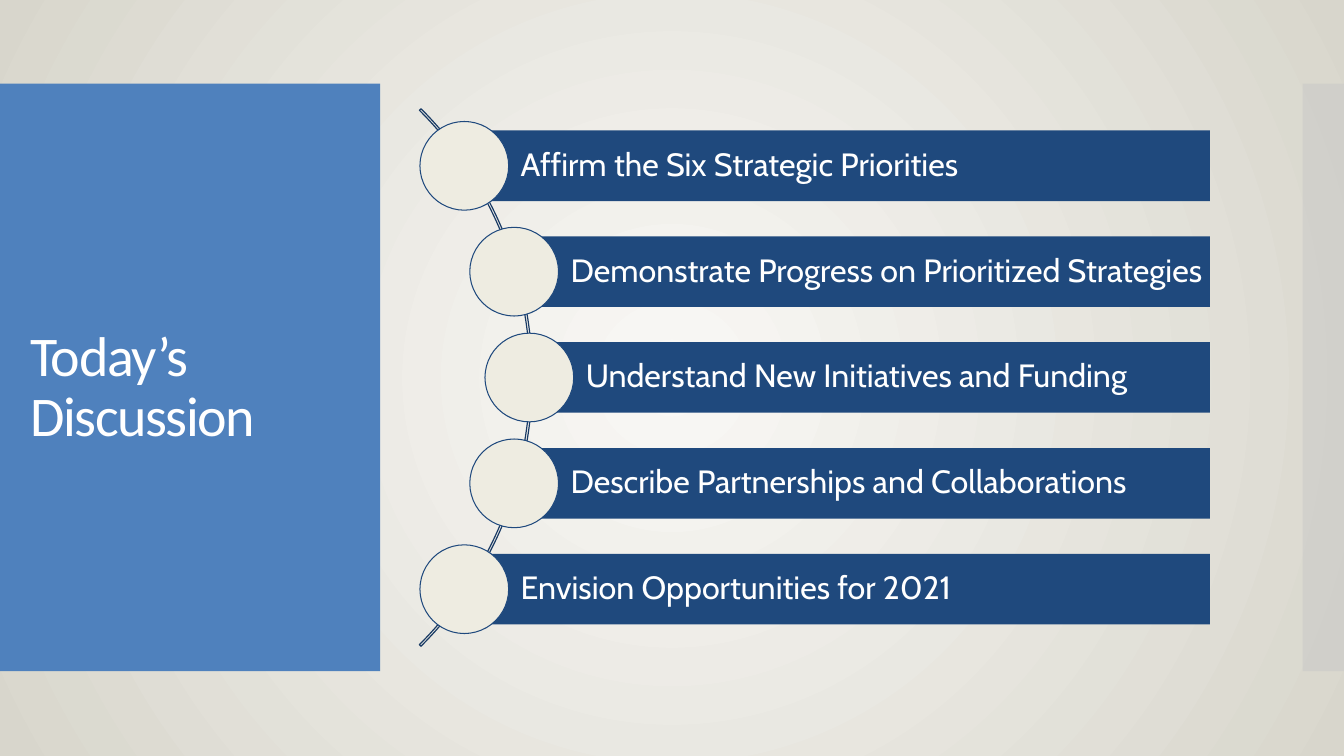
import math

import pptx
import pptx.util
import pptx.dml.color
import pptx.enum.shapes
import pptx.enum.text
import pptx.oxml
import pptx.oxml.ns

Inches = pptx.util.Inches
Pt = pptx.util.Pt
RGBColor = pptx.dml.color.RGBColor
MSO_SHAPE = pptx.enum.shapes.MSO_SHAPE
MSO_ANCHOR = pptx.enum.text.MSO_ANCHOR
PP_ALIGN = pptx.enum.text.PP_ALIGN
qn = pptx.oxml.ns.qn

WHITE = RGBColor(0xFF, 0xFF, 0xFF)
BLUE = RGBColor(0x4F, 0x81, 0xBD)
NAVY = RGBColor(0x1F, 0x49, 0x7D)
ARC_NAVY = RGBColor(0x19, 0x3A, 0x64)
CREAM = RGBColor(0xEE, 0xEC, 0xE1)
GREY = RGBColor(0xC8, 0xC8, 0xC8)
BG_CENTER = RGBColor(0xF9, 0xF8, 0xF5)
BG_EDGE = RGBColor(0xD8, 0xD6, 0xCC)

TOPICS = [
    "Affirm the Six Strategic Priorities",
    "Demonstrate Progress on Prioritized Strategies",
    "Understand New Initiatives and Funding",
    "Describe Partnerships and Collaborations",
    "Envision Opportunities for 2021",
]


def add_shape(slide, kind, left, top, width, height, fill=None, line=None, weight=0.75):
    sp = slide.shapes.add_shape(
        kind, Inches(left), Inches(top), Inches(width), Inches(height))
    sp.shadow.inherit = False
    if fill is None:
        sp.fill.background()
    else:
        sp.fill.solid()
        sp.fill.fore_color.rgb = fill
    if line is None:
        sp.line.fill.background()
    else:
        sp.line.color.rgb = line
        sp.line.width = Pt(weight)
    return sp


def set_text(tf, text, font, size, anchor):
    tf.word_wrap = True
    tf.vertical_anchor = anchor
    p = tf.paragraphs[0]
    p.alignment = PP_ALIGN.LEFT
    p.line_spacing = 0.9
    r = p.add_run()
    r.text = text
    p.font.name = font
    p.font.size = Pt(size)
    p.font.color.rgb = WHITE
    return r


def add_background(slide):
    fill = slide.background.fill
    fill.gradient()
    for stop, color in zip(fill.gradient_stops, (BG_CENTER, BG_EDGE)):
        stop.color.rgb = color
    lin = next(slide.background._cSld.iter(qn("a:lin")))
    radial = pptx.oxml.parse_xml(
        '<a:path xmlns:a="http://schemas.openxmlformats.org/drawingml/2006/main" '
        'path="circle"><a:fillToRect l="50000" t="50000" r="50000" b="50000"/></a:path>')
    lin.getparent().replace(lin, radial)


def add_title_panel(slide, left, top, width, height):
    add_shape(slide, MSO_SHAPE.RECTANGLE, left, top, width, height, BLUE)
    box = slide.shapes.add_textbox(
        Inches(left + 0.2), Inches(top + 0.11), Inches(2.92), Inches(3.56))
    r = set_text(box.text_frame, "Today’s Discussion", "Calibri", 40, MSO_ANCHOR.BOTTOM)
    r._r.get_or_add_rPr().set("spc", "-100")


def add_edge_panel(slide, left, top, width, height):
    sp = add_shape(slide, MSO_SHAPE.RECTANGLE, left, top, width, height, GREY)
    color = next(sp.fill._xPr.iter(qn("a:srgbClr")))
    color.append(pptx.oxml.parse_xml(
        '<a:alpha xmlns:a="http://schemas.openxmlformats.org/drawingml/2006/main" '
        'val="50000"/>'))


def add_topics(slide, left, top, width, height):
    pitch, bar_height, dot = 1.05, 0.7, 0.88
    arc_radius, dot_radius = 3.77, 3.74
    center_x, center_y = left - 2.66, top + height / 2
    arc = add_shape(
        slide, MSO_SHAPE.BLOCK_ARC, center_x - arc_radius, center_y - arc_radius,
        2 * arc_radius, 2 * arc_radius, line=ARC_NAVY, weight=0.85)
    for i, value in enumerate((189, 27, 0.0029)):
        arc.adjustments[i] = value

    for i, topic in enumerate(TOPICS):
        dy = (i - (len(TOPICS) - 1) / 2) * pitch
        x = center_x + math.sqrt(dot_radius ** 2 - dy ** 2)
        y = center_y + dy
        bar = add_shape(slide, MSO_SHAPE.RECTANGLE, x, y - bar_height / 2,
                        left + width - x, bar_height, NAVY)
        tf = bar.text_frame
        tf.margin_left = Inches(0.56)
        tf.margin_right = tf.margin_top = tf.margin_bottom = Inches(0.06)
        set_text(tf, topic, "Cabin", 23, MSO_ANCHOR.MIDDLE)
        add_shape(slide, MSO_SHAPE.OVAL, x - dot / 2, y - dot / 2, dot, dot, CREAM, NAVY)


def main():
    prs = pptx.Presentation()
    prs.slide_width = Inches(13.33)
    prs.slide_height = Inches(7.5)
    slide = prs.slides.add_slide(prs.slide_layouts[6])
    add_background(slide)
    add_title_panel(slide, 0, 0.83, 3.77, 5.83)
    add_edge_panel(slide, 12.92, 0.83, 0.41, 5.83)
    add_topics(slide, 4.17, 1.08, 7.83, 5.33)
    prs.save("out.pptx")


if __name__ == "__main__":
    main()
